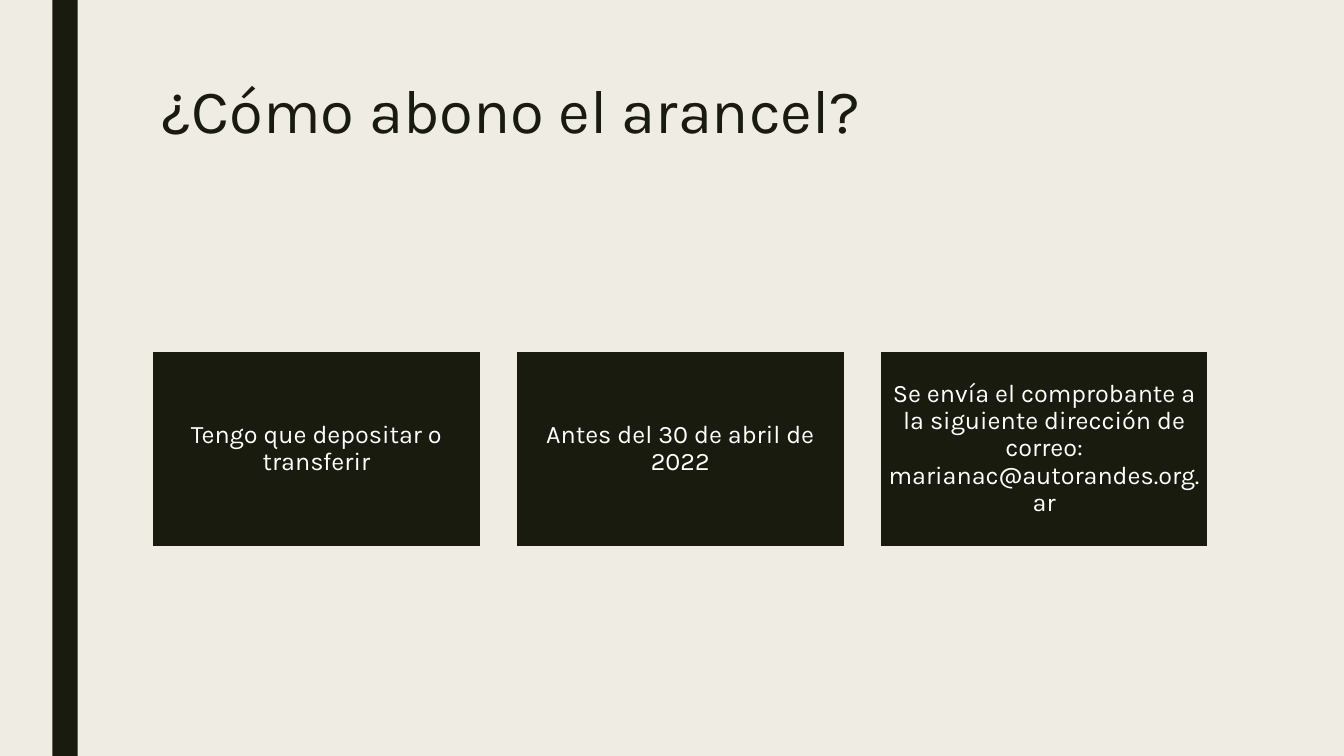
from pptx import Presentation
from pptx.dml.color import RGBColor
from pptx.enum.shapes import MSO_SHAPE as Shape
from pptx.enum.text import MSO_ANCHOR as Anchor, MSO_AUTO_SIZE as AutoSize, PP_ALIGN as Align
from pptx.util import Cm, Pt

FONT = "Karla"
DARK, CREAM, WHITE = "191B0E", "EFEDE3", "FFFFFF"
STEPS = [
    "Tengo que depositar o transferir",
    "Antes del 30 de abril de 2022",
    "Se envía el comprobante a la siguiente dirección de correo: "
    "marianac@autorandes.org.ar",
]


def paint(color_format, color):
    color_format.rgb = RGBColor.from_string(color)


def fill_solid(fill, color):
    fill.solid()
    paint(fill.fore_color, color)


def format_text(frame, text, size, color, align, spacing):
    frame.text = text
    frame.word_wrap = True
    frame.auto_size = AutoSize.NONE
    para = frame.paragraphs[0]
    para.alignment = align
    para.line_spacing = spacing
    font = para.runs[0].font
    font.name, font.size = FONT, Pt(size)
    paint(font.color, color)


def add_block(slide, left, top, width, height):
    block = slide.shapes.add_shape(
        Shape.RECTANGLE, Cm(left), Cm(top), Cm(width), Cm(height))
    block.shadow.inherit = False
    fill_solid(block.fill, DARK)
    block.line.fill.background()
    return block


def place_title(slide, text, left, top, width, height):
    title = slide.shapes.title
    title.left, title.top = Cm(left), Cm(top)
    title.width, title.height = Cm(width), Cm(height)
    format_text(title.text_frame, text, 44, DARK, Align.LEFT, 0.89)
    title.text_frame.vertical_anchor = Anchor.TOP


def add_step_cards(slide, steps, left, top, width, height, gap=0.84):
    card_width = (width - gap * (len(steps) - 1)) / len(steps)
    for index, step in enumerate(steps):
        card = add_block(slide, left + index * (card_width + gap), top, card_width, height)
        paint(card.line.color, CREAM)
        card.line.width = Pt(2.75)
        frame = card.text_frame
        frame.margin_left = frame.margin_right = Cm(0.18)
        frame.margin_top = frame.margin_bottom = Cm(0.18)
        frame.vertical_anchor = Anchor.MIDDLE
        format_text(frame, step, 18, WHITE, Align.CENTER, 0.9)


def main():
    deck = Presentation()
    deck.slide_width, deck.slide_height = Cm(33.87), Cm(19.05)
    slide = deck.slides.add_slide(deck.slide_layouts[5])
    fill_solid(slide.background.fill, CREAM)
    add_block(slide, 1.32, 0, 0.64, 19.05)
    place_title(slide, "¿Cómo abono el arancel?", 3.81, 1.9, 26.67, 4.11)
    add_step_cards(slide, STEPS, 3.81, 8.81, 26.67, 5)
    deck.save("out.pptx")


if __name__ == "__main__":
    main()
